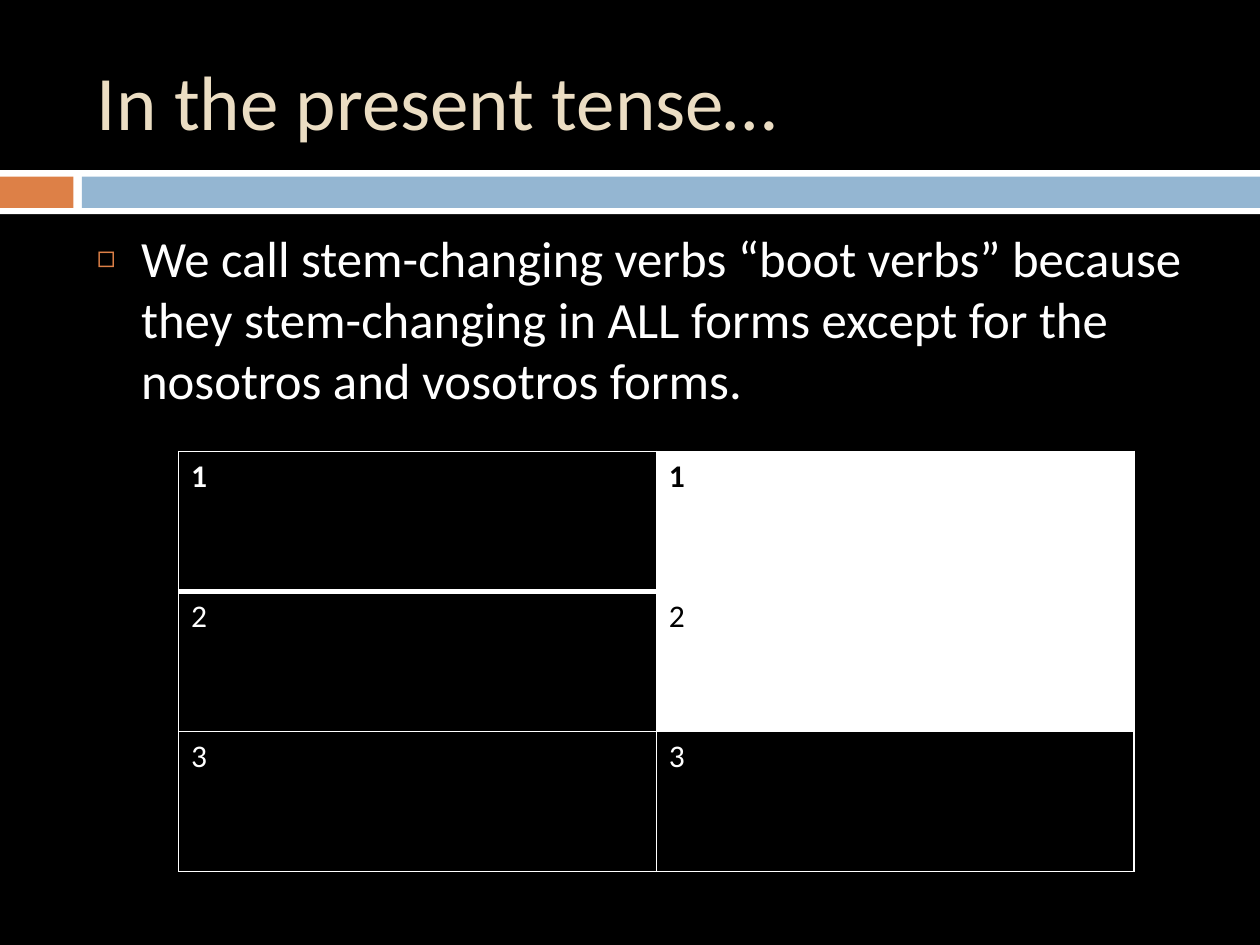
from lxml.etree import SubElement
from pptx import Presentation
from pptx.dml.color import RGBColor
from pptx.enum.shapes import MSO_SHAPE as Shape
from pptx.enum.text import MSO_ANCHOR as Anchor, MSO_AUTO_SIZE as AutoSize, PP_ALIGN as Align
from pptx.oxml.ns import qn
from pptx.util import Cm, Pt

TITLE = "In the present tense…"
BODY = ("We call stem-changing verbs “boot verbs” because they stem-changing "
        "in ALL forms except for the nosotros and vosotros forms.")
ROWS = [("1", "1"), ("2", "2"), ("3", "3")]
BOOT_GAP = {(0, 1), (1, 1)}
COLORS = {"black": "000000", "white": "FFFFFF", "orange": "DD8047",
          "blue": "94B6D2", "cream": "EBDDC3"}
BANDS = [("white", 0, 3.43, 25.4, 0.89), ("orange", 0, 3.56, 1.48, 0.63),
         ("blue", 1.65, 3.56, 23.75, 0.63)]
TITLE_BOX = (1.7, 0.64, 22.66, 2.74)
BODY_BOX = (1.7, 4.45, 22.66, 12.5)
TABLE_BOX = (3.6, 9.1, 19.26, 8.47)
INDENT = Cm(0.89)


def rgb(name):
    return RGBColor.from_string(COLORS[name])


def format_text(para, size, color, bold=False):
    for span in para.runs:
        span.font.name = "Calibri"
        span.font.size = Pt(size)
        span.font.bold = bold
        span.font.color.rgb = rgb(color)


def place(shape, box):
    shape.left, shape.top, shape.width, shape.height = map(Cm, box)


def fill_placeholder(shape, box, text, size, color, anchor):
    place(shape, box)
    frame = shape.text_frame
    frame.text = text
    frame.auto_size = AutoSize.NONE
    frame.vertical_anchor = anchor
    para = frame.paragraphs[0]
    para.alignment = Align.LEFT
    format_text(para, size, color)
    return para


def add_bullet(para, char, color, percent):
    props = para._p.get_or_add_pPr()
    props.set("marL", str(INDENT))
    props.set("indent", str(-INDENT))
    bullet_color = SubElement(props, qn("a:buClr"))
    SubElement(bullet_color, qn("a:srgbClr"), val=COLORS[color])
    SubElement(props, qn("a:buSzPct"), val=str(percent * 1000))
    SubElement(props, qn("a:buChar"), char=char)


def add_border(cell, side, width):
    line = SubElement(cell._tc.get_or_add_tcPr(), qn(f"a:ln{side}"), w=str(Pt(width)))
    solid = SubElement(line, qn("a:solidFill"))
    SubElement(solid, qn("a:srgbClr"), val=COLORS["white"])


def add_verb_table(page):
    table = page.shapes.add_table(len(ROWS), len(ROWS[0]), *map(Cm, TABLE_BOX)).table
    for r, row in enumerate(ROWS):
        for c, text in enumerate(row):
            cell = table.cell(r, c)
            thick_side = {0: "B", 1: "T"}.get(r)
            for side in "LRTB":
                add_border(cell, side, 3 if side == thick_side else 1)
            back, ink = ("white", "black") if (r, c) in BOOT_GAP else ("black", "white")
            cell.fill.solid()
            cell.fill.fore_color.rgb = rgb(back)
            cell.text_frame.text = text
            format_text(cell.text_frame.paragraphs[0], 18, ink, bold=r == 0)


def main():
    deck = Presentation()
    deck.slide_width, deck.slide_height = Cm(25.4), Cm(19.05)
    page = deck.slides.add_slide(deck.slide_layouts[1])
    page.background.fill.solid()
    page.background.fill.fore_color.rgb = rgb("black")

    for color, *box in BANDS:
        band = page.shapes.add_shape(Shape.RECTANGLE, *map(Cm, box))
        band.shadow.inherit = False
        band.fill.solid()
        band.fill.fore_color.rgb = rgb(color)
        band.line.fill.background()

    fill_placeholder(page.shapes.title, TITLE_BOX, TITLE, 44, "cream", Anchor.MIDDLE)
    para = fill_placeholder(page.placeholders[1], BODY_BOX, BODY, 29, "white", Anchor.TOP)
    para.space_before = Pt(7)
    add_bullet(para, "◻", "orange", 60)
    add_verb_table(page)
    deck.save("out.pptx")


if __name__ == "__main__":
    main()
